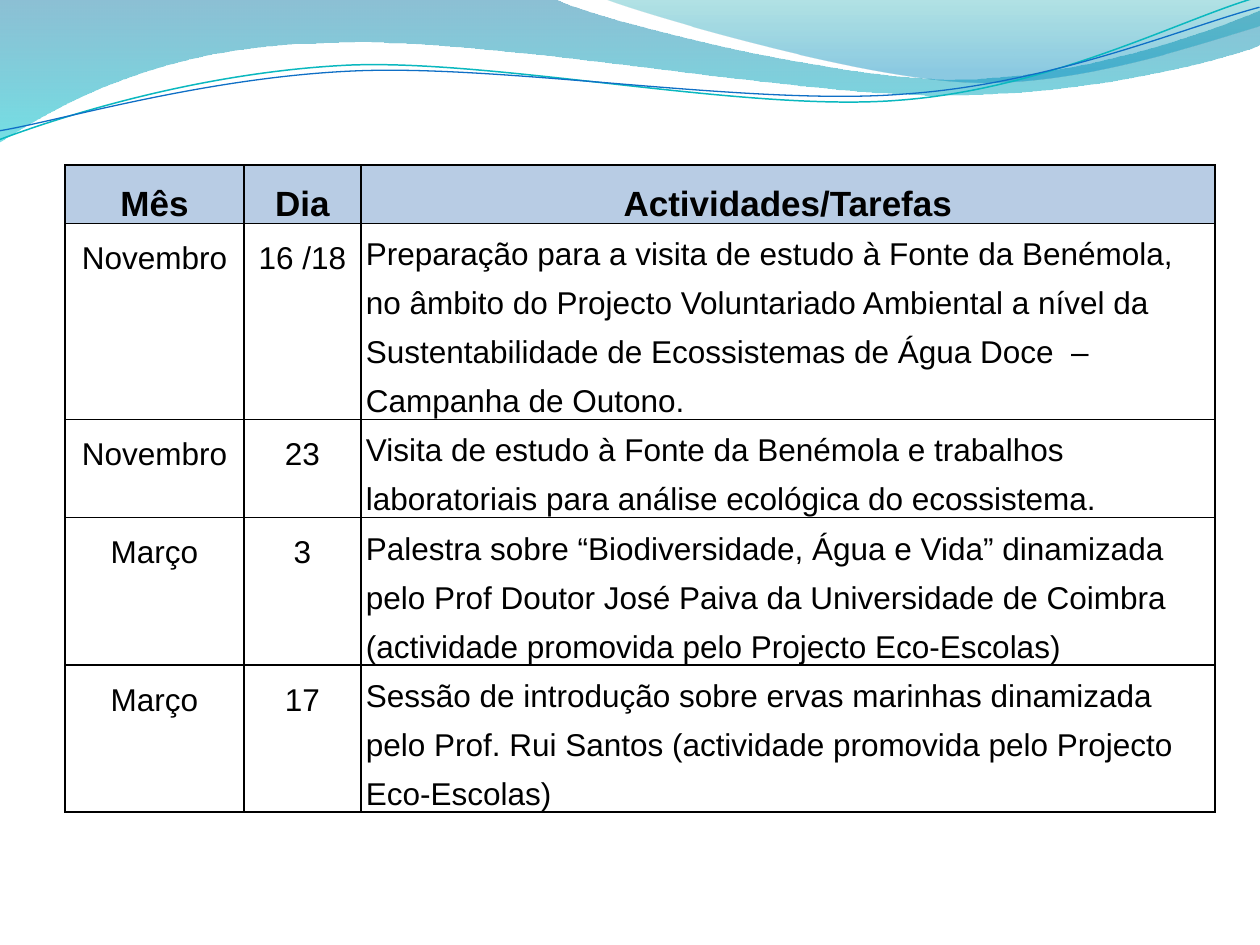
import pptx
import pptx.dml.color
import pptx.enum.text
import pptx.oxml
import pptx.oxml.ns
import pptx.util

EMU_PER_PX = 914400 / 126
SLIDE_SIZE = (1260, 945)

THEME = {
    "font": "Arial",
    "text": "000000",
    "border": "000000",
    "border_pt": 1,
    "header_fill": "B8CCE4",
    "header_pt": 20,
    "body_pt": 18,
    "activity_spacing_pt": 28,
}

# A segment of one point is a straight line; one of three points is a cubic curve.
# Gradient stops: position, colour, opacity in percent.
BANDS = [
    {
        "start": (0, 0),
        "segments": [
            [(554, -1)],
            [(600, 21), (837, 79), (955, 79)],
            [(1075, 79), (1207, 33), (1260, 11)],
            [(1261, 45)],
            [(1239, 55), (1096, 96), (940, 95)],
            [(784, 95), (481, 35), (324, 43)],
            [(163, 45), (58, 105), (-1, 142)],
            [(0, 0)],
        ],
        "stops": [(0, "0074A1", 45), (1, "00C6CF", 55)],
    },
    {
        "start": (604, -1),
        "segments": [
            [(641, 14), (859, 78), (969, 82)],
            [(1079, 87), (1211, 40), (1260, 26)],
            [(1260, 0)],
            [(604, -1)],
        ],
        "stops": [(0, "00A1A9", 30), (0.8, "008BBF", 45)],
    },
]
WAVE_ROTATION = 357.3
WAVE_LINES = [
    {
        "start": (-3, 110),
        "segments": [
            [(59, 90), (200, 52), (350, 52)],
            [(498, 53), (745, 118), (897, 113)],
            [(1048, 109), (1184, 45), (1260, 27)],
        ],
        "color": "0AB8BF",
        "width_pt": 0.85,
    },
    {
        "start": (-2, 101),
        "segments": [
            [(58, 94), (207, 57), (357, 58)],
            [(508, 59), (751, 112), (902, 107)],
            [(1052, 104), (1187, 53), (1262, 37)],
        ],
        "color": "0F6FC6",
        "width_pt": 0.75,
    },
]

TABLE_ORIGIN = (65, 165)
TABLE_HEIGHT = 651
COLUMN_WIDTHS = [179, 117, 854]
MINIMUM_ROW_HEIGHTS = [43, 78, 52, 78, 52]
CELL_MARGIN = 5
ROWS = [
    ("Mês", "Dia", "Actividades/Tarefas"),
    ("Novembro", "16 /18",
     "Preparação para a visita de estudo à Fonte da Benémola, no âmbito do Projecto "
     "Voluntariado Ambiental a nível da Sustentabilidade de Ecossistemas de Água Doce  – "
     "Campanha de Outono."),
    ("Novembro", "23",
     "Visita de estudo à Fonte da Benémola e trabalhos laboratoriais para análise "
     "ecológica do ecossistema."),
    ("Março", "3",
     "Palestra sobre “Biodiversidade, Água e Vida” dinamizada pelo Prof Doutor José Paiva "
     "da Universidade de Coimbra (actividade promovida pelo Projecto Eco-Escolas)"),
    ("Março", "17",
     "Sessão de introdução sobre ervas marinhas dinamizada pelo Prof. Rui Santos "
     "(actividade promovida pelo Projecto Eco-Escolas)"),
]


def px(value):
    return pptx.util.Emu(round(value * EMU_PER_PX))


def rgb(color):
    return pptx.dml.color.RGBColor.from_string(color)


def add_wave(slide, wave, close):
    """Draw the outline through all points, then turn each three-point run into a curve."""
    builder = slide.shapes.build_freeform(*map(px, wave["start"]))
    points = [point for segment in wave["segments"] for point in segment]
    builder.add_line_segments([(px(x), px(y)) for x, y in points], close=close)
    shape = builder.convert_to_shape()
    shape.shadow.inherit = False
    lines = iter(list(shape.element.iter(pptx.oxml.ns.qn("a:lnTo"))))
    for segment in wave["segments"]:
        parts = [next(lines) for point in segment]
        if len(parts) == 3:
            curve = pptx.oxml.parse_xml(f'<a:cubicBezTo {pptx.oxml.ns.nsdecls("a")}/>')
            parts[0].addprevious(curve)
            for part in parts:
                curve.append(part[0])
                part.getparent().remove(part)
    return shape


def add_band(slide, band):
    shape = add_wave(slide, band, close=True)
    shape.line.fill.background()
    shape.fill.gradient()
    shape.fill.gradient_angle = 270
    for stop, (position, color, opacity) in zip(shape.fill.gradient_stops, band["stops"]):
        stop.position = position
        stop.color.rgb = rgb(color)
    colors = shape.element.spPr.iter(pptx.oxml.ns.qn("a:srgbClr"))
    for color_element, (position, color, opacity) in zip(colors, band["stops"]):
        color_element.append(pptx.oxml.parse_xml(
            f'<a:alpha {pptx.oxml.ns.nsdecls("a")} val="{opacity * 1000}"/>'))


def add_wave_line(slide, wave):
    shape = add_wave(slide, wave, close=False)
    shape.rotation = WAVE_ROTATION
    shape.fill.background()
    shape.line.color.rgb = rgb(wave["color"])
    shape.line.width = pptx.util.Pt(wave["width_pt"])
    return shape


def add_borders(cell):
    properties = cell._tc.get_or_add_tcPr()
    width = pptx.util.Pt(THEME["border_pt"])
    for side in ("lnL", "lnR", "lnT", "lnB"):
        properties.append(pptx.oxml.parse_xml(
            f'<a:{side} {pptx.oxml.ns.nsdecls("a")} w="{width}"><a:solidFill>'
            f'<a:srgbClr val="{THEME["border"]}"/></a:solidFill></a:{side}>'))


def format_cell(cell, text, is_header, is_activity):
    add_borders(cell)
    cell.margin_left = cell.margin_right = px(CELL_MARGIN)
    cell.margin_top = cell.margin_bottom = 0
    if is_header:
        cell.fill.solid()
        cell.fill.fore_color.rgb = rgb(THEME["header_fill"])
        cell.vertical_anchor = pptx.enum.text.MSO_ANCHOR.MIDDLE
    else:
        cell.fill.background()
    cell.text_frame.text = text
    paragraph = cell.text_frame.paragraphs[0]
    if is_activity and not is_header:
        paragraph.line_spacing = pptx.util.Pt(THEME["activity_spacing_pt"])
    else:
        paragraph.alignment = pptx.enum.text.PP_ALIGN.CENTER
        paragraph.line_spacing = 1.5
    font = paragraph.runs[0].font
    font.name = THEME["font"]
    font.size = pptx.util.Pt(THEME["header_pt" if is_header else "body_pt"])
    font.bold = is_header
    font.color.rgb = rgb(THEME["text"])


def add_schedule(slide):
    frame = slide.shapes.add_table(
        len(ROWS), len(COLUMN_WIDTHS), *map(px, TABLE_ORIGIN),
        px(sum(COLUMN_WIDTHS)), px(TABLE_HEIGHT))
    table = frame.table
    table.first_row = table.horz_banding = False
    for column, width in zip(table.columns, COLUMN_WIDTHS):
        column.width = px(width)
    for row_index, (row, height, texts) in enumerate(
            zip(table.rows, MINIMUM_ROW_HEIGHTS, ROWS)):
        row.height = px(height)
        for column_index, (cell, text) in enumerate(zip(row.cells, texts)):
            format_cell(cell, text, row_index == 0, column_index == 2)
    frame.height = px(TABLE_HEIGHT)


def main():
    presentation = pptx.Presentation()
    presentation.slide_width, presentation.slide_height = map(px, SLIDE_SIZE)
    slide = presentation.slides.add_slide(presentation.slide_layouts[6])
    for band in BANDS:
        add_band(slide, band)
    slide.shapes.add_group_shape([add_wave_line(slide, wave) for wave in WAVE_LINES])
    add_schedule(slide)
    presentation.save("out.pptx")


if __name__ == "__main__":
    main()
